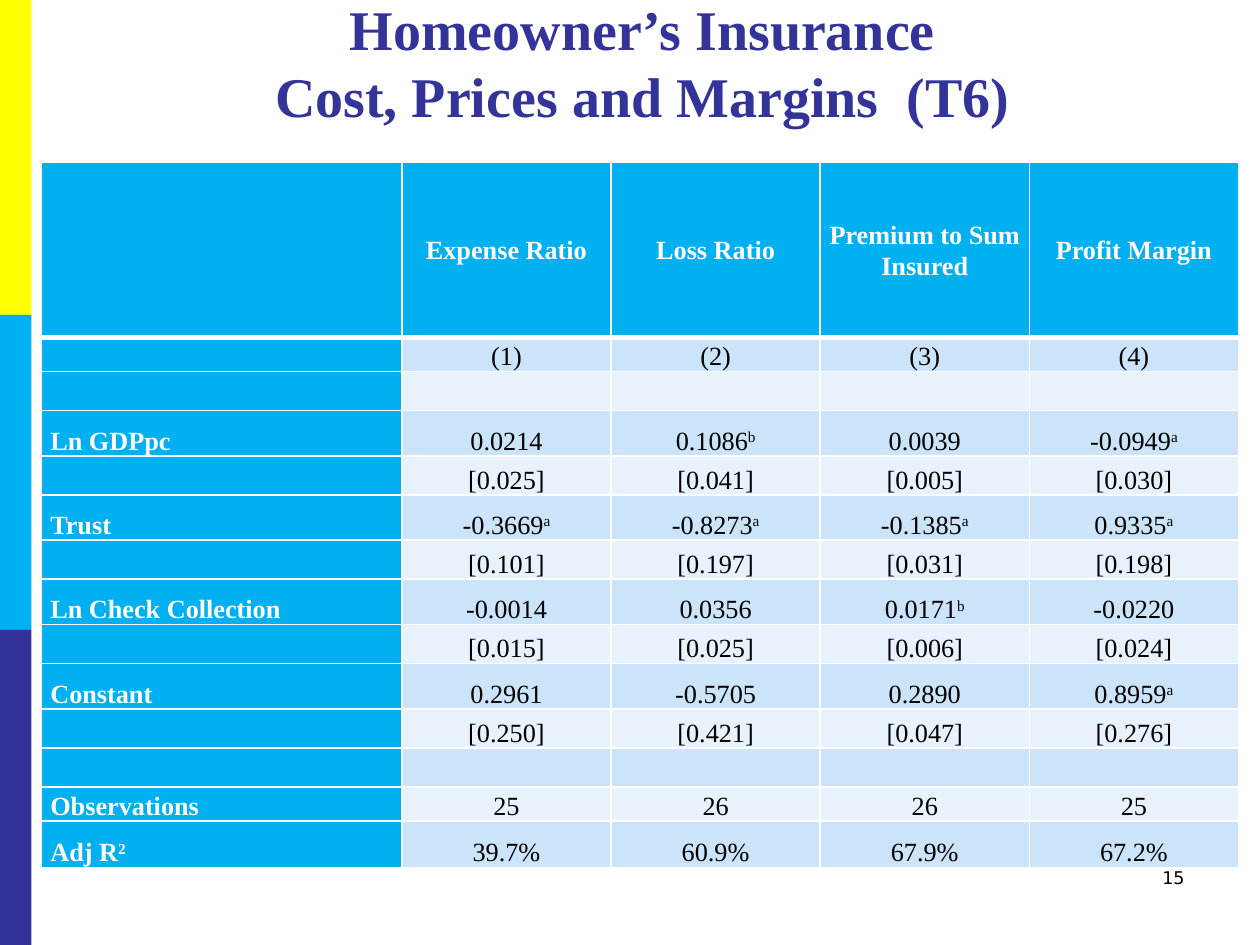
from dataclasses import dataclass

import lxml.etree
import pptx
import pptx.dml.color
import pptx.enum.shapes
import pptx.enum.text
import pptx.oxml.ns
import pptx.util

Inches = pptx.util.Inches
Pt = pptx.util.Pt
qn = pptx.oxml.ns.qn
ALIGN = pptx.enum.text.PP_ALIGN
ANCHOR = pptx.enum.text.MSO_ANCHOR


@dataclass(frozen=True)
class Theme:
    yellow: str = "FFFF00"
    cyan: str = "00B0F0"
    navy: str = "333399"
    white: str = "FFFFFF"
    black: str = "000000"
    band_dark: str = "CCE4F9"
    band_light: str = "E7F2FC"
    font: str = "Times New Roman"
    number_font: str = "DejaVu Sans"
    title_size: int = 32
    table_size: int = 15
    number_size: int = 10
    rule: int = 1
    header_rule: int = 3


@dataclass(frozen=True)
class Row:
    height: float
    label: str = ""
    values: tuple[str, ...] = ("",) * 4


THEME = Theme()
SUPERSCRIPT = "^"
COLUMN_WIDTHS = (2.86, 1.66, 1.66, 1.66, 1.66)
ROWS = (
    Row(1.39, "", ("Expense Ratio", "Loss Ratio", "Premium to Sum Insured", "Profit Margin")),
    Row(0.25, "", ("(1)", "(2)", "(3)", "(4)")),
    Row(0.31),
    Row(0.36, "Ln GDPpc", ("0.0214", "0.1086^b", "0.0039", "-0.0949^a")),
    Row(0.31, "", ("[0.025]", "[0.041]", "[0.005]", "[0.030]")),
    Row(0.36, "Trust", ("-0.3669^a", "-0.8273^a", "-0.1385^a", "0.9335^a")),
    Row(0.31, "", ("[0.101]", "[0.197]", "[0.031]", "[0.198]")),
    Row(0.36, "Ln Check Collection", ("-0.0014", "0.0356", "0.0171^b", "-0.0220")),
    Row(0.31, "", ("[0.015]", "[0.025]", "[0.006]", "[0.024]")),
    Row(0.36, "Constant", ("0.2961", "-0.5705", "0.2890", "0.8959^a")),
    Row(0.31, "", ("[0.250]", "[0.421]", "[0.047]", "[0.276]")),
    Row(0.31),
    Row(0.27, "Observations", ("25", "26", "26", "25")),
    Row(0.37, "Adj R^2", ("39.7%", "60.9%", "67.9%", "67.2%")),
)


def rgb(color: str) -> pptx.dml.color.RGBColor:
    return pptx.dml.color.RGBColor.from_string(color)


def add_run(p, text: str, size: int, color: str, bold: bool = False, font: str = THEME.font):
    r = p.add_run()
    r.text = text
    r.font.name = font
    r.font.size = Pt(size)
    r.font.bold = bold
    r.font.color.rgb = rgb(color)
    return r


def add_side_bars(slide) -> None:
    height = 2.5
    for i, color in enumerate((THEME.yellow, THEME.cyan, THEME.navy)):
        sp = slide.shapes.add_shape(
            pptx.enum.shapes.MSO_SHAPE.RECTANGLE,
            Inches(0), Inches(i * height), Inches(0.25), Inches(height))
        sp.shadow.inherit = False
        sp.fill.solid()
        sp.fill.fore_color.rgb = rgb(color)
        sp.line.fill.background()


def add_title(slide) -> None:
    sp = slide.shapes.title
    sp.left, sp.top, sp.width, sp.height = map(Inches, (0.33, 0.04, 9.67, 0.9))
    tf = sp.text_frame
    tf.word_wrap = True
    tf.auto_size = pptx.enum.text.MSO_AUTO_SIZE.NONE
    tf.vertical_anchor = ANCHOR.MIDDLE
    tf.margin_right = Inches(0.23)
    p = tf.paragraphs[0]
    p.alignment = ALIGN.CENTER
    p.line_spacing = 1.0
    add_run(p, "Homeowner’s Insurance", THEME.title_size, THEME.navy, True)
    p.add_line_break()
    add_run(p, "Cost, Prices and Margins  (T6)", THEME.title_size, THEME.navy, True)


def set_borders(cell, top: int, bottom: int) -> None:
    tc_pr = cell._tc.get_or_add_tcPr()
    sides = {"a:lnL": THEME.rule, "a:lnR": THEME.rule, "a:lnT": top, "a:lnB": bottom}
    for tag, width in sides.items():
        ln = lxml.etree.SubElement(tc_pr, qn(tag), w=str(Pt(width)))
        fill = lxml.etree.SubElement(ln, qn("a:solidFill"))
        lxml.etree.SubElement(fill, qn("a:srgbClr"), val=THEME.white)


def fill_cell(cell, text: str, row: int, col: int) -> None:
    """Format one cell; text after the superscript mark is raised."""
    is_header, is_label = row == 0, col == 0
    set_borders(cell,
                THEME.header_rule if row == 1 else THEME.rule,
                THEME.header_rule if is_header else THEME.rule)
    accent = is_header or is_label
    band = THEME.band_dark if row % 2 else THEME.band_light
    cell.fill.solid()
    cell.fill.fore_color.rgb = rgb(THEME.cyan if accent else band)
    cell.margin_left = cell.margin_right = Inches(0.07)
    cell.margin_top = cell.margin_bottom = 0
    cell.vertical_anchor = ANCHOR.MIDDLE if is_header else ANCHOR.BOTTOM
    p = cell.text_frame.paragraphs[0]
    p.alignment = ALIGN.LEFT if is_label else ALIGN.CENTER
    p.line_spacing = 1.07
    if not text:
        # Keeps an empty cell from growing to the default type size
        lxml.etree.SubElement(p._p, qn("a:endParaRPr"), sz=str(THEME.table_size * 100))
        return
    color = THEME.white if accent else THEME.black
    base, _, raised = text.partition(SUPERSCRIPT)
    add_run(p, base, THEME.table_size, color, accent)
    if raised:
        r = add_run(p, raised, THEME.table_size, color, accent)
        r._r.get_or_add_rPr().set("baseline", "30000")


def add_results_table(slide) -> None:
    table = slide.shapes.add_table(
        len(ROWS), len(COLUMN_WIDTHS), Inches(0.33), Inches(1.29),
        Inches(sum(COLUMN_WIDTHS)), Inches(sum(row.height for row in ROWS))).table
    table.first_col = True
    for column, width in zip(table.columns, COLUMN_WIDTHS):
        column.width = Inches(width)
    for i, row in enumerate(ROWS):
        table.rows[i].height = Inches(row.height)
        for j, text in enumerate((row.label, *row.values)):
            fill_cell(table.cell(i, j), text, i, j)


def add_page_number(slide) -> None:
    sp = slide.shapes.add_textbox(Inches(7.17), Inches(6.83), Inches(2.33), Inches(0.5))
    tf = sp.text_frame
    tf.word_wrap = True
    p = tf.paragraphs[0]
    p.alignment = ALIGN.RIGHT
    add_run(p, "15", THEME.number_size, THEME.black, font=THEME.number_font)


def main() -> None:
    prs = pptx.Presentation()
    prs.slide_width, prs.slide_height = Inches(10), Inches(7.5)
    slide = prs.slides.add_slide(prs.slide_layouts.get_by_name("Title Only"))
    add_side_bars(slide)
    add_title(slide)
    add_page_number(slide)
    add_results_table(slide)
    prs.save("out.pptx")


if __name__ == "__main__":
    main()
